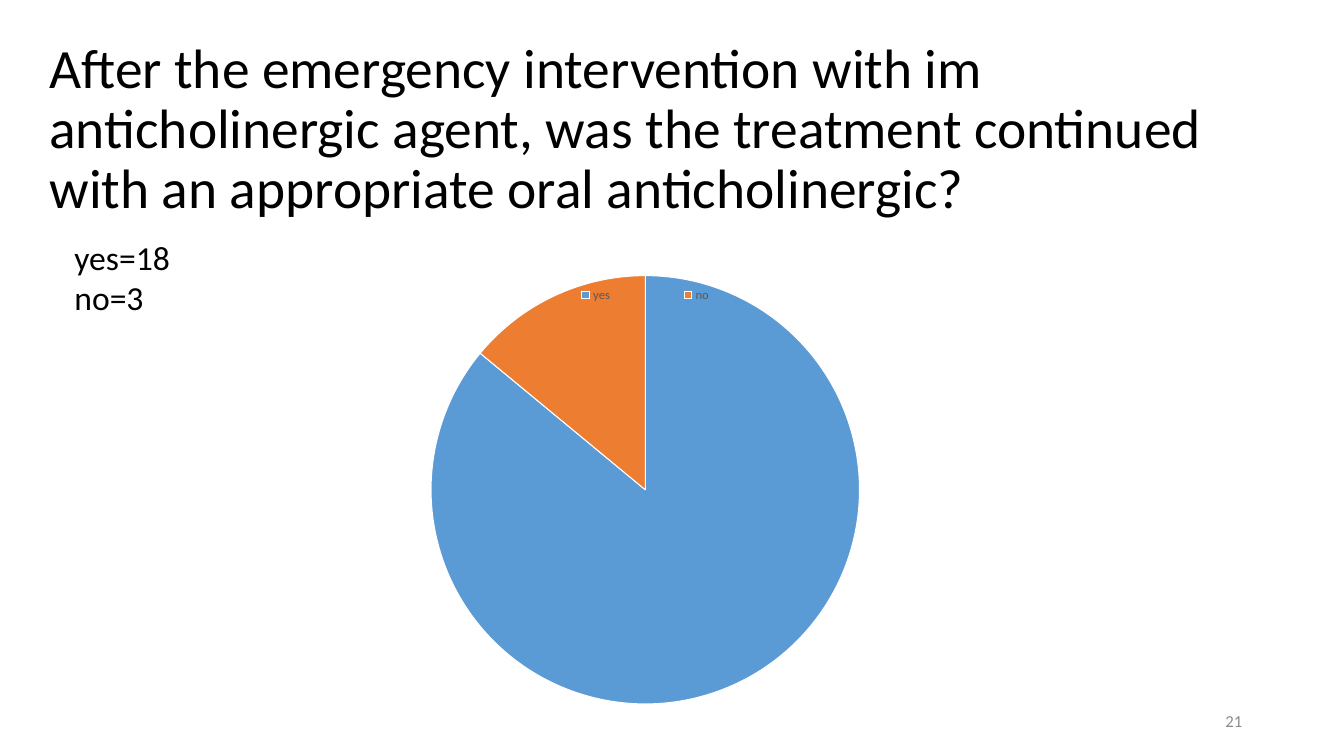
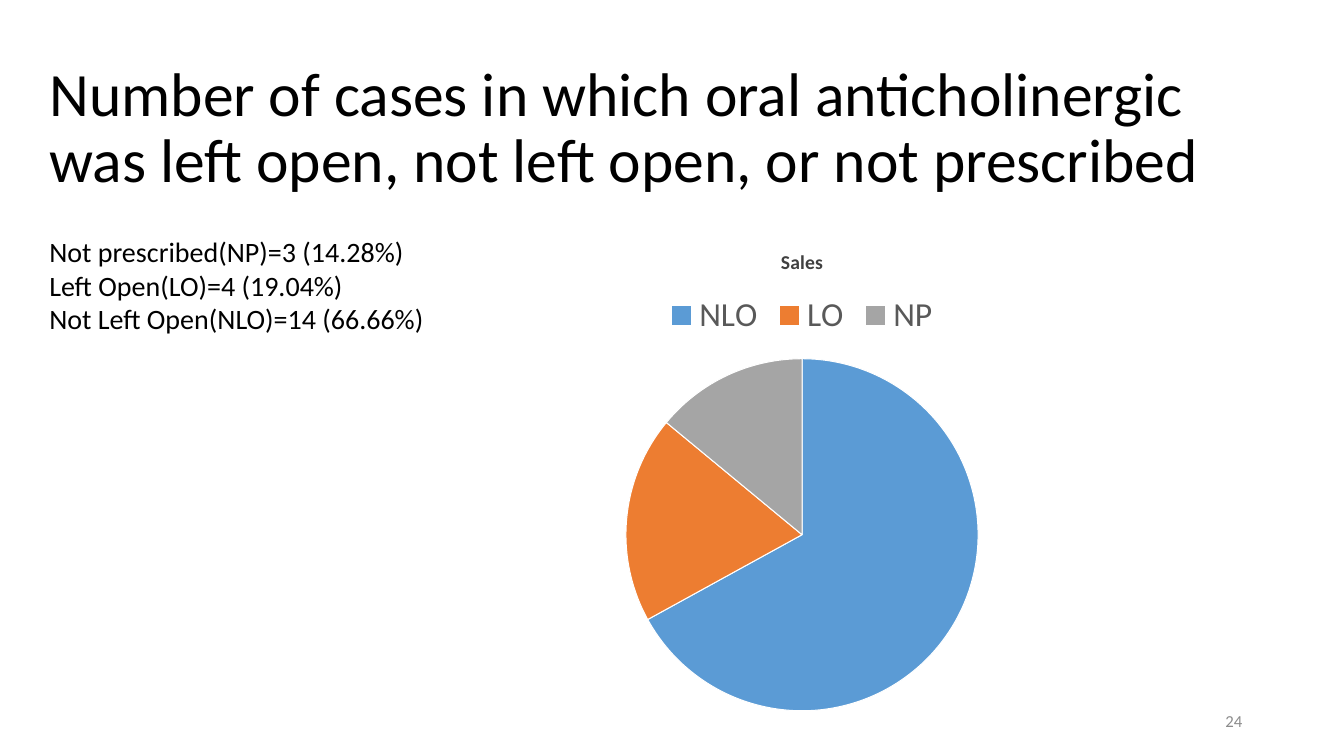
from lxml import etree
from pptx import Presentation
from pptx import util as u
from pptx.chart.data import CategoryChartData
from pptx.dml.color import RGBColor
from pptx.enum import chart as ch, text as t
from pptx.oxml.ns import qn

FONT = "Calibri"
BLACK, LEGEND_GRAY, HEADING_GRAY, NUMBER_GRAY = "000000", "595959", "404040", "8C8C8C"
SLICE_COLOURS = ["5B9BD5", "ED7D31", "A5A5A5"]
LEFT, TOP, WIDTH = 0.39, 0.29, 12.02
NUMBER_BOX = (9.42, 6.95, 3, 0.4)

SLIDES = [
    dict(
        title="After the emergency intervention with im anticholinergic agent, "
              "was the treatment continued with an appropriate oral anticholinergic?",
        title_size=39.6, title_height=2.01,
        counts=["yes=18", "no=3"], counts_size=24, counts_box=(0.64, 2.3, 2.63, 1.16),
        series="Series 1", shares={"yes": 86, "no": 14}, heading=None,
        chart_box=(LEFT, 2.3, WIDTH, 4.83), pie_area=(0.32, 0.09, 0.36, 0.88),
        legend_size=9, legend_area=(0.39, 0.1, 0.22, 0.06), number="21",
    ),
    dict(
        title="Number of cases in which oral anticholinergic was left open, "
              "not left open, or not prescribed",
        title_size=44, title_height=1.99,
        counts=["Not prescribed(NP)=3 (14.28%)", "Left Open(LO)=4 (19.04%)",
                "Not Left Open(NLO)=14 (66.66%)"],
        counts_size=20, counts_box=(LEFT, 2.28, 4.18, 1.47),
        series="Sales", shares={"NLO": 67, "LO": 19, "NP": 14}, heading="Sales",
        chart_box=(3.49, 2.28, 8.93, 4.92), pie_area=(0.3, 0.26, 0.4, 0.71),
        legend_size=24, legend_area=None, number="24",
    ),
]


def rgb(colour):
    return RGBColor.from_string(colour)


def inches(box):
    return [u.Inches(length) for length in box]


def style(font, size, colour=BLACK, bold=False):
    font.name, font.size, font.bold = FONT, u.Pt(size), bold
    font.color.rgb = rgb(colour)


def write(frame, lines, size, colour=BLACK, align=t.PP_ALIGN.LEFT,
          anchor=t.MSO_ANCHOR.TOP, spacing=1.0):
    frame.word_wrap = True
    frame.auto_size = t.MSO_AUTO_SIZE.NONE
    frame.vertical_anchor = anchor
    for i, line in enumerate(lines):
        paragraph = frame.add_paragraph() if i else frame.paragraphs[0]
        paragraph.alignment, paragraph.line_spacing = align, spacing
        run = paragraph.add_run()
        run.text = line
        style(run.font, size, colour)


def set_layout(parent, position, area, inner=False):
    for old in parent.findall(qn("c:layout")):
        parent.remove(old)
    layout = etree.Element(qn("c:layout"))
    parent.insert(position, layout)
    manual = etree.SubElement(layout, qn("c:manualLayout"))
    settings = [("layoutTarget", "inner")] if inner else []
    settings += [("xMode", "edge"), ("yMode", "edge"), *zip("xywh", area)]
    for tag, value in settings:
        etree.SubElement(manual, qn("c:" + tag)).set("val", str(value))


def add_pie(slide, content):
    data = CategoryChartData()
    data.categories = list(content["shares"])
    data.add_series(content["series"], list(content["shares"].values()))
    pie = slide.shapes.add_chart(
        ch.XL_CHART_TYPE.PIE, *inches(content["chart_box"]), data).chart
    style(pie.font, 10)

    pie.has_title = bool(content["heading"])
    if content["heading"]:
        run = pie.chart_title.text_frame.paragraphs[0].add_run()
        run.text = content["heading"]
        style(run.font, 14, HEADING_GRAY, bold=True)
        pie.chart_title.include_in_layout = False

    pie.has_legend = True
    pie.legend.position = ch.XL_LEGEND_POSITION.TOP
    pie.legend.include_in_layout = False
    style(pie.legend.font, content["legend_size"], LEGEND_GRAY)
    if content["legend_area"]:
        set_layout(pie.legend._element, 1, content["legend_area"])

    plot = pie.plots[0]
    plot.vary_by_categories = True
    set_layout(plot._element.getparent(), 0, content["pie_area"], inner=True)
    for i, colour in enumerate(SLICE_COLOURS[:len(content["shares"])]):
        point = plot.series[0].points[i].format
        point.fill.solid()
        point.fill.fore_color.rgb = rgb(colour)
        point.line.color.rgb = rgb("FFFFFF")
        point.line.width = u.Pt(0.75)


def add_text(slide, box, lines, size, **formatting):
    write(slide.shapes.add_textbox(*inches(box)).text_frame, lines, size, **formatting)


def build(deck, content):
    slide = deck.slides.add_slide(deck.slide_layouts[5])
    title = slide.shapes.title
    title.left, title.top, title.width, title.height = inches(
        (LEFT, TOP, WIDTH, content["title_height"]))
    write(title.text_frame, [content["title"]], content["title_size"],
          anchor=t.MSO_ANCHOR.MIDDLE, spacing=0.9)
    add_pie(slide, content)
    add_text(slide, content["counts_box"], content["counts"], content["counts_size"])
    add_text(slide, NUMBER_BOX, [content["number"]], 12, colour=NUMBER_GRAY,
             align=t.PP_ALIGN.RIGHT, anchor=t.MSO_ANCHOR.MIDDLE)


def main():
    deck = Presentation()
    deck.slide_width, deck.slide_height = inches((13.33, 7.5))
    for content in SLIDES:
        build(deck, content)
    deck.save("out.pptx")


if __name__ == "__main__":
    main()
